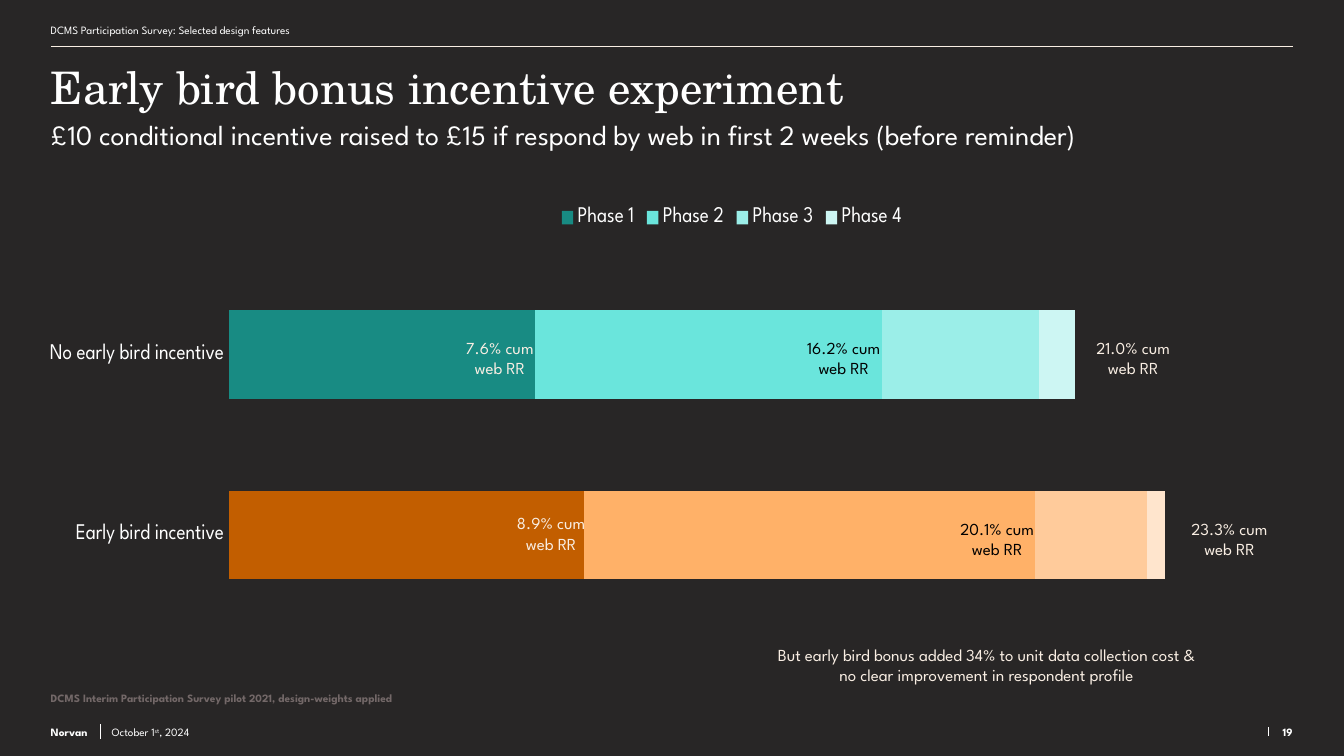
from lxml import etree
from pptx import Presentation
from pptx.chart.data import CategoryChartData
from pptx.dml.color import RGBColor
from pptx.enum import chart as ch, shapes, text
from pptx.oxml import parse_xml
from pptx.oxml.ns import nsdecls, qn
from pptx.util import Cm, Pt

DARK = RGBColor(0x28, 0x26, 0x26)
WHITE = RGBColor(0xFF, 0xFF, 0xFF)
BLACK = RGBColor(0, 0, 0)
CREAM = RGBColor(0xF9, 0xEE, 0xE3)
GREY = RGBColor(0x73, 0x68, 0x68)
TEAL = [RGBColor(0x18, 0x8B, 0x83), RGBColor(0x6A, 0xE5, 0xDC),
        RGBColor(0x9B, 0xEE, 0xE8), RGBColor(0xCD, 0xF6, 0xF3)]
AMBER = [RGBColor(0xC2, 0x5E, 0x00), RGBColor(0xFF, 0xB1, 0x68),
         RGBColor(0xFF, 0xCB, 0x9B), RGBColor(0xFF, 0xE5, 0xCD)]
SANS = "League Spartan"
SERIF = "TeX Gyre Schola"
TOP, MID, LOW = (text.MSO_ANCHOR.TOP, text.MSO_ANCHOR.MIDDLE,
                 text.MSO_ANCHOR.BOTTOM)
LEFT, MIDDLE, RIGHT = (text.PP_ALIGN.LEFT, text.PP_ALIGN.CENTER,
                       text.PP_ALIGN.RIGHT)


def add_text(slide, box, runs, size, color=WHITE, font=SANS, bold=False,
             anchor=TOP, align=LEFT, inset=0):
    """Place one paragraph; each run is (words, raised)."""
    shape = slide.shapes.add_textbox(*map(Cm, box))
    frame = shape.text_frame
    frame.word_wrap = True
    frame.vertical_anchor = anchor
    frame.margin_left = frame.margin_right = frame.margin_bottom = 0
    frame.margin_top = Cm(inset)
    para = frame.paragraphs[0]
    para.alignment = align
    for words, raised in runs:
        run = para.add_run()
        run.text = words
        run.font.name = font
        run.font.size = Pt(size)
        run.font.bold = bold
        run.font.color.rgb = color
        if raised:
            run.font._element.set("baseline", "30000")


def add_rule(slide, x1, y1, x2, y2, color):
    rule = slide.shapes.add_connector(
        shapes.MSO_CONNECTOR.STRAIGHT, Cm(x1), Cm(y1), Cm(x2), Cm(y2))
    rule.line.color.rgb = color
    rule.line.width = Pt(0.5)
    etree.SubElement(rule._element.spPr, qn("a:effectLst"))


def add_head(slide, box):
    x, y, w, h = box
    # Running head and rule
    add_text(slide, (x, y, w, 0.41),
             [("DCMS Participation Survey: Selected design features", False)],
             6, anchor=MID)
    add_rule(slide, x, y + 0.51, x + w, y + 0.51, CREAM)
    # Title and subtitle
    add_text(slide, (x, y + 0.51, w, 1.35),
             [("Early bird bonus incentive experiment", False)],
             24, font=SERIF, inset=0.25)
    add_text(slide, (x, y + 1.86, w, h - 1.86),
             [("£10 conditional incentive raised to £15 if respond by web "
               "in first 2 weeks (before reminder)", False)], 15)


def set_font(font, size, color):
    font.name = SANS
    font.size = Pt(size)
    font.color.rgb = color


def set_area(area, **sizes):
    """Fix the inner plot area by fractions of the chart."""
    for old in area.findall(qn("c:layout")):
        area.remove(old)
    parts = "".join(f'<c:{k} val="{v}"/>' for k, v in sizes.items())
    area.insert(0, parse_xml(
        f'<c:layout {nsdecls("c")}><c:manualLayout>'
        '<c:layoutTarget val="inner"/><c:xMode val="edge"/>'
        f'<c:yMode val="edge"/>{parts}</c:manualLayout></c:layout>'))


def add_bars(slide, box):
    data = CategoryChartData()
    data.categories = ["No early bird incentive", "Early bird incentive"]
    rows = [(68, 79), (77, 100), (35, 25), (8, 4)]
    for num, row in enumerate(rows, 1):
        data.add_series(f"Phase {num}", row)
    chart = slide.shapes.add_chart(
        ch.XL_CHART_TYPE.BAR_STACKED, *map(Cm, box), data).chart
    set_font(chart.font, 10, BLACK)
    chart.has_title = False

    # Bars: teal above, amber below
    plot = chart.plots[0]
    plot.gap_width, plot.overlap = 104, 100
    plot.vary_by_categories = False
    for series, teal, amber in zip(plot.series, TEAL, AMBER):
        for form, color in ((series.format, teal),
                            (series.points[1].format, amber)):
            form.fill.solid()
            form.fill.fore_color.rgb = color

    # Axes
    cats, vals = chart.category_axis, chart.value_axis
    cats.reverse_order = True
    cats.major_tick_mark = ch.XL_TICK_MARK.NONE
    cats.format.line.fill.background()
    set_font(cats.tick_labels.font, 12, WHITE)
    vals.minimum_scale, vals.maximum_scale = 0, 223.5
    vals.has_major_gridlines = False
    vals.visible = False

    # Legend, centred over a plot area of full width
    chart.has_legend = True
    legend = chart.legend
    legend.position = ch.XL_LEGEND_POSITION.TOP
    legend.include_in_layout = False
    set_font(legend.font, 12, WHITE)
    set_area(chart._chartSpace.chart.plotArea, x=0, y=0.146, w=1, h=0.733)


def add_notes(slide, box):
    x, y, w, h = box
    # Response rates beside the phases they close
    rates = [("7.6%", 7.77, 2.75, CREAM), ("16.2%", 14.27, 2.75, BLACK),
             ("21.0%", 19.74, 2.75, CREAM), ("8.9%", 8.74, 6.07, CREAM),
             ("20.1%", 17.17, 6.17, BLACK), ("23.3%", 21.56, 6.17, CREAM)]
    for rate, dx, dy, color in rates:
        add_text(slide, (x + dx, y + dy, 1.47, 0.76),
                 [(f"{rate} cum web RR", False)], 9, color,
                 anchor=MID, align=MIDDLE)
    # Remark on cost
    add_text(slide, (x + 13.61, y + 8.03, 8.18, 1.8),
             [("But early bird bonus added 34% to unit data collection cost "
               "& no clear improvement in respondent profile", False)],
             9, CREAM, anchor=MID, align=MIDDLE)


def add_foot(slide, box):
    x, y, w, h = box
    end = x + w
    # Data source
    add_text(slide, (x, y, 15.5, 0.28),
             [("DCMS Interim Participation Survey pilot 2021, "
               "design-weights applied", False)], 6, GREY, bold=True)
    # Name, date and page number
    base = y + h - 0.33
    add_text(slide, (x, base, 0.92, 0.33), [("Norvan", False)], 6,
             bold=True, anchor=LOW)
    add_rule(slide, x + 0.94, base + 0.05, x + 0.94, base + 0.33, WHITE)
    add_text(slide, (x + 1.15, base, 14.86, 0.33),
             [("October 1", False), ("st", True), (", 2024", False)], 6,
             anchor=LOW)
    add_rule(slide, end - 0.46, base + 0.1, end - 0.46, base + 0.28, WHITE)
    add_text(slide, (end - 0.46, base, 0.46, 0.33), [("19", False)], 6,
             bold=True, anchor=LOW, align=RIGHT)


def main():
    deck = Presentation()
    deck.slide_width, deck.slide_height = Cm(25.4), Cm(14.29)
    slide = deck.slides.add_slide(deck.slide_layouts[6])
    slide.background.fill.solid()
    slide.background.fill.fore_color.rgb = DARK
    body = (0.94, 3.63, 22.4, 9.32)
    add_head(slide, (0.96, 0.36, 23.47, 2.74))
    add_bars(slide, body)
    add_notes(slide, body)
    add_foot(slide, (0.96, 13.06, 23.47, 0.91))
    deck.save("out.pptx")


if __name__ == "__main__":
    main()
